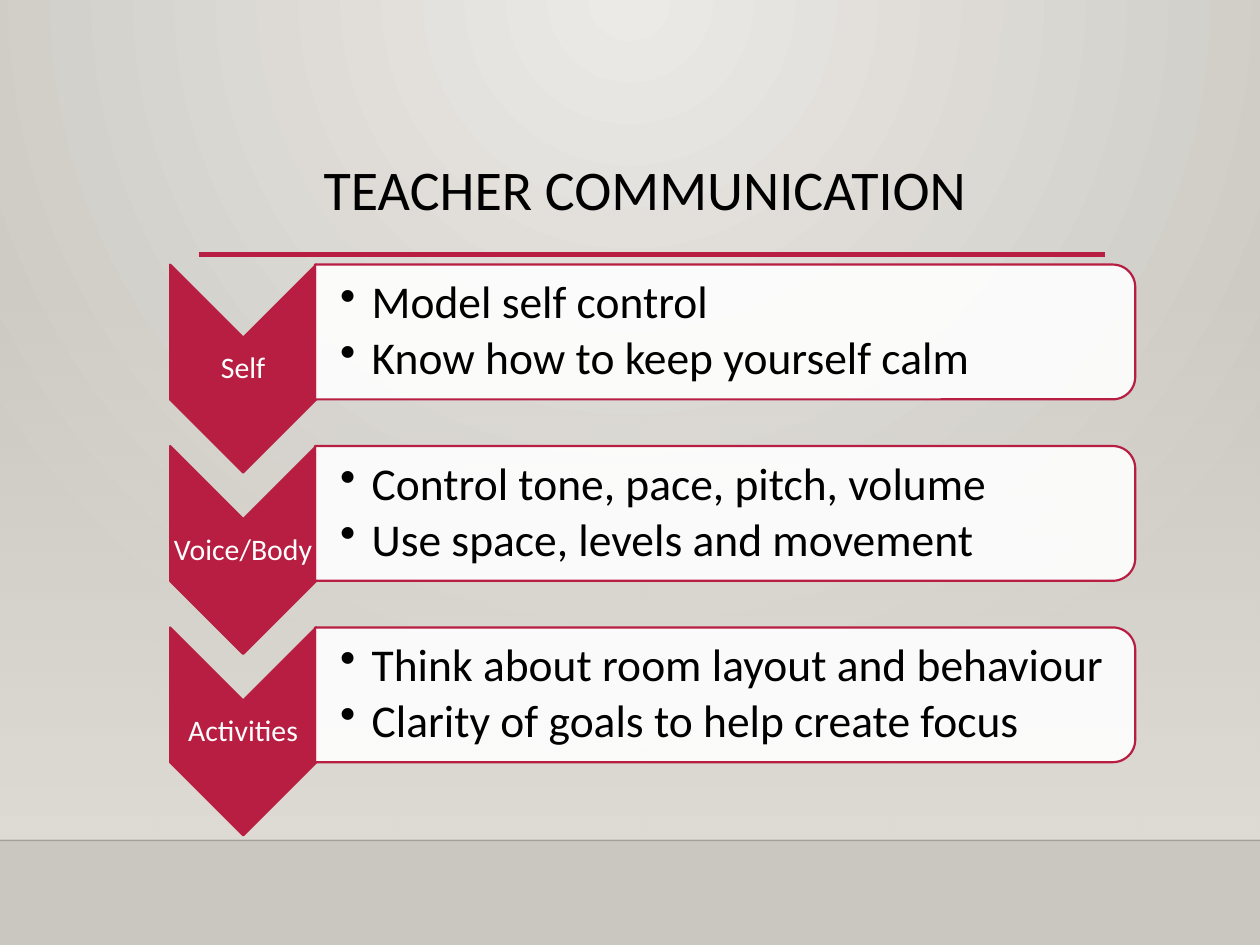
from lxml import etree
from pptx import Presentation
from pptx.dml.color import RGBColor
from pptx.enum.shapes import MSO_CONNECTOR, MSO_SHAPE
from pptx.enum.text import MSO_ANCHOR, MSO_AUTO_SIZE, PP_ALIGN
from pptx.oxml.ns import qn
from pptx.util import Inches, Pt

STRAIGHT = MSO_CONNECTOR.STRAIGHT
RECTANGLE, CHEVRON = MSO_SHAPE.RECTANGLE, MSO_SHAPE.CHEVRON
ROUNDED_BAR = MSO_SHAPE.ROUND_2_SAME_RECTANGLE
TOP, MIDDLE = MSO_ANCHOR.TOP, MSO_ANCHOR.MIDDLE
LEFT, CENTER = PP_ALIGN.LEFT, PP_ALIGN.CENTER
NO_AUTOFIT = MSO_AUTO_SIZE.NONE

TITLE = "TEACHER COMMUNICATION"
STEPS = [
    ("Self", ["Model self control", "Know how to keep yourself calm"]),
    ("Voice/Body", ["Control tone, pace, pitch, volume", "Use space, levels and movement"]),
    ("Activities", ["Think about room layout and behaviour",
                    "Clarity of goals to help create focus"]),
]
FONT, ACCENT, BLACK, WHITE = "Calibri", "B71E42", "000000", "FFFFFF"
WALL_LIGHT, WALL_DARK, HORIZON = "ECEAE7", "CAC7C1", "DFDBD5"
FIRST_TOP, STEP_PITCH = 2.1, 1.44
CHEVRON_LEFT, CHEVRON_WIDTH, CHEVRON_HEIGHT = 1.35, 1.16, 1.65
BAR_LEFT, BAR_WIDTH, BAR_HEIGHT = 2.5, 6.51, 1.07


def color(value):
    return RGBColor.from_string(value)


def set_alpha(color_element, percent):
    etree.SubElement(color_element, qn("a:alpha"), val=str(percent * 1000))


def first_color(shape):
    return next(shape.element.spPr.iter(qn("a:srgbClr")))


def set_gradient(fill, colors):
    fill.gradient()
    for stop, value in zip(fill.gradient_stops, colors):
        stop.color.rgb = color(value)


def add_line(shapes, start, end, line_color, width):
    line = shapes.add_connector(STRAIGHT, *map(Inches, start + end))
    line.line.color.rgb = color(line_color)
    line.line.width = Pt(width)
    etree.SubElement(line.element.spPr, qn("a:effectLst"))
    return line


def add_turned_shape(shapes, kind, left, top, width, height, fill):
    shape = shapes.add_shape(kind, Inches(left + (width - height) / 2),
                             Inches(top + (height - width) / 2),
                             Inches(height), Inches(width))
    shape.rotation = 90
    shape.shadow.inherit = False
    shape.fill.solid()
    shape.fill.fore_color.rgb = color(fill)
    shape.line.color.rgb = color(ACCENT)
    shape.line.width = Pt(1.25)
    return shape


def write_text(shape, lines, size, text_color=BLACK, align=LEFT, anchor=MIDDLE,
               margins=None, space_after=0, bullet=None):
    frame = shape.text_frame
    frame.word_wrap = True
    frame.auto_size = NO_AUTOFIT
    frame.vertical_anchor = anchor
    if margins:
        (frame.margin_left, frame.margin_top,
         frame.margin_right, frame.margin_bottom) = map(Inches, margins)
    for index, line in enumerate(lines):
        paragraph = frame.add_paragraph() if index else frame.paragraphs[0]
        paragraph.alignment = align
        paragraph.line_spacing = 0.9
        paragraph.space_after = Pt(space_after)
        if bullet:
            properties = paragraph._p.get_or_add_pPr()
            properties.set("marL", str(Inches(0.25)))
            properties.set("indent", str(Inches(-0.25)))
            etree.SubElement(properties, qn("a:buChar"), char=bullet)
        run = paragraph.add_run()
        run.text = line
        run.font.name = FONT
        run.font.size = Pt(size)
        run.font.color.rgb = color(text_color)


def add_backdrop(slide):
    set_gradient(slide.background.fill, [WALL_LIGHT, WALL_DARK])
    gradient = next(slide.element.iter(qn("a:gradFill")))
    gradient.remove(gradient.find(qn("a:lin")))
    circle = etree.SubElement(gradient, qn("a:path"), path="circle")
    etree.SubElement(circle, qn("a:fillToRect"), l="43000", t="0", r="43000", b="100000")

    haze = slide.shapes.add_shape(RECTANGLE, 0, Inches(2.2), Inches(10), Inches(4.46))
    haze.shadow.inherit = False
    haze.line.fill.background()
    set_gradient(haze.fill, [HORIZON, HORIZON])
    haze.fill.gradient_angle = 270
    set_alpha(first_color(haze), 0)

    floor_line = add_line(slide.shapes, (0, 6.67), (10, 6.67), BLACK, 1)
    set_alpha(first_color(floor_line), 20)
    add_line(slide.shapes, (1.58, 2.02), (8.77, 2.02), ACCENT, 2.5)


def add_step(shapes, top, label, points):
    add_turned_shape(shapes, CHEVRON, CHEVRON_LEFT, top,
                     CHEVRON_WIDTH, CHEVRON_HEIGHT, ACCENT)
    label_box = shapes.add_textbox(Inches(CHEVRON_LEFT), Inches(top + 0.58),
                                   Inches(CHEVRON_WIDTH), Inches(0.5))
    write_text(label_box, [label], 17, text_color=WHITE, align=CENTER,
               margins=(0.01, 0.01, 0.01, 0.01), space_after=6)
    bar = add_turned_shape(shapes, ROUNDED_BAR, BAR_LEFT, top,
                           BAR_WIDTH, BAR_HEIGHT, WHITE)
    set_alpha(first_color(bar), 90)
    points_box = shapes.add_textbox(Inches(BAR_LEFT), Inches(top + 0.05),
                                    Inches(BAR_WIDTH - 0.05), Inches(BAR_HEIGHT - 0.1))
    write_text(points_box, points, 26, margins=(0.2, 0.02, 0.02, 0.02),
               space_after=4, bullet="•")


def main():
    presentation = Presentation()
    presentation.slide_width, presentation.slide_height = Inches(10), Inches(7.5)
    slide = presentation.slides.add_slide(presentation.slide_layouts[5])
    add_backdrop(slide)
    title = slide.shapes.title
    title.left, title.top = Inches(0.67), Inches(1.24)
    title.width, title.height = Inches(8.9), Inches(1.33)
    write_text(title, [TITLE], 32, align=CENTER, anchor=TOP)
    for index, (label, points) in enumerate(STEPS):
        add_step(slide.shapes, FIRST_TOP + index * STEP_PITCH, label, points)
    presentation.save("out.pptx")


if __name__ == "__main__":
    main()
